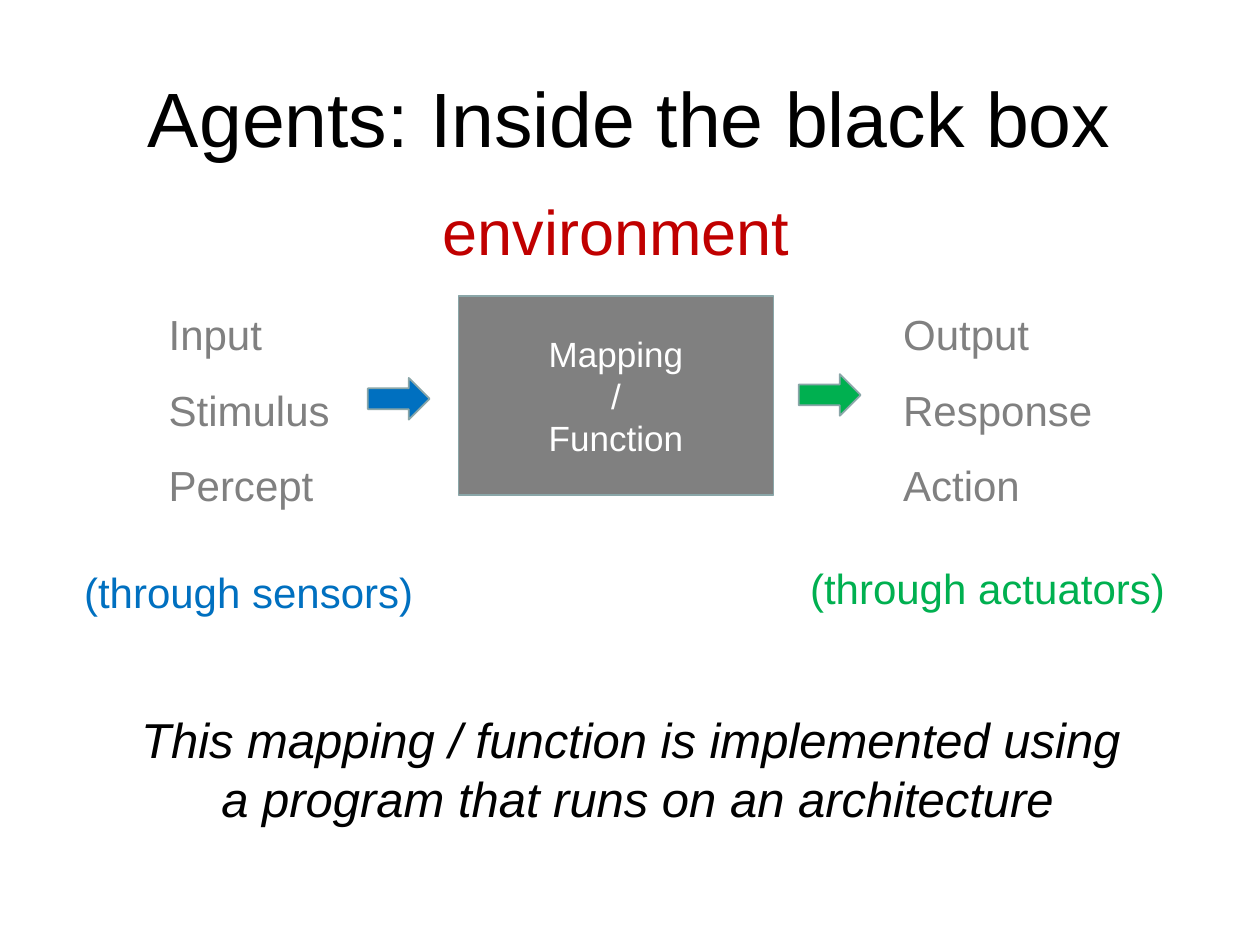
from lxml import etree
from pptx import Presentation
from pptx.dml.color import RGBColor
from pptx.enum.shapes import MSO_SHAPE
from pptx.enum.text import MSO_ANCHOR, MSO_AUTO_SIZE, PP_ALIGN
from pptx.oxml.ns import qn
from pptx.util import Pt

LEFT, CENTER = PP_ALIGN.LEFT, PP_ALIGN.CENTER
MIDDLE = MSO_ANCHOR.MIDDLE
FIT_SHAPE = MSO_AUTO_SIZE.SHAPE_TO_FIT_TEXT
RECTANGLE, RIGHT_ARROW = MSO_SHAPE.RECTANGLE, MSO_SHAPE.RIGHT_ARROW

FONT = "Arial"
BLACK, WHITE, GRAY, RED = "000000", "FFFFFF", "808080", "C00000"
BLUE, GREEN, OUTLINE = "0070C0", "00B050", "8AA6A8"

# Content; boxes are left, top, width, height in points
TITLE = "Agents: Inside the black box"
TITLE_BOX = (36, 21.6, 648, 90)
BLACK_BOX_LINES = ["Mapping", "/", "Function"]
BLACK_BOX = (262, 169.2, 180, 113.8)
ENVIRONMENT = "environment"
ENVIRONMENT_BOX = (244.8, 106.6, 214.6, 51)
CONCLUSION = ["This mapping / function is implemented using ",
              "a program that runs on an architecture"]
CONCLUSION_BOX = (69.8, 401.8, 589, 75)
SIDES = [
    {"terms": ["Input", "Stimulus", "Percept"],
     "terms_box": (89.3, 158.4, 107.3, 138.2),
     "means": "(through sensors)", "means_box": (41, 320.4, 204.5, 36),
     "arrow_box": (210.2, 216, 35.3, 23.8), "color": BLUE},
    {"terms": ["Output", "Response", "Action"],
     "terms_box": (509, 158.4, 123.8, 138.2),
     "means": "(through actuators)", "means_box": (455.8, 318.2, 219.6, 36),
     "arrow_box": (456.5, 213.8, 35.3, 23.8), "color": GREEN},
]


def rgb(color):
    return RGBColor.from_string(color)


def points(box):
    return [Pt(length) for length in box]


def write(frame, lines, size, color, align=LEFT, spacing=None, italic=None):
    frame.text = "\n".join(lines)
    for paragraph in frame.paragraphs:
        paragraph.alignment = align
        paragraph.line_spacing = spacing
        for run in paragraph.runs:
            run.font.name = FONT
            run.font.size = Pt(size)
            run.font.italic = italic
            run.font.color.rgb = rgb(color)


def add_label(slide, box, lines, size, color, **style):
    frame = slide.shapes.add_textbox(*points(box)).text_frame
    frame.word_wrap = False
    frame.auto_size = FIT_SHAPE
    write(frame, lines, size, color, **style)
    return frame


def add_block(slide, preset, box, fill):
    block = slide.shapes.add_shape(preset, *points(box))
    block.shadow.inherit = False
    block.fill.solid()
    block.fill.fore_color.rgb = rgb(fill)
    block.line.color.rgb = rgb(OUTLINE)
    block.line.width = Pt(1)
    return block


def add_text_shadow(run):
    effects = etree.Element(qn("a:effectLst"))
    shadow = etree.SubElement(effects, qn("a:outerShdw"), blurRad="38100",
                              dist="38100", dir="2700000", algn="tl")
    color = etree.SubElement(shadow, qn("a:srgbClr"), val=BLACK)
    etree.SubElement(color, qn("a:alpha"), val="43000")
    run.font.fill._xPr.find(qn("a:solidFill")).addnext(effects)


def main():
    deck = Presentation()
    deck.slide_width, deck.slide_height = Pt(720), Pt(540)
    slide = deck.slides.add_slide(deck.slide_layouts[5])

    # Title
    title = slide.shapes.title
    title.left, title.top, title.width, title.height = points(TITLE_BOX)
    title.text_frame.vertical_anchor = MIDDLE
    write(title.text_frame, [TITLE], 44, BLACK, align=CENTER)

    # Black box in its environment
    black_box = add_block(slide, RECTANGLE, BLACK_BOX, GRAY)
    black_box.text_frame.vertical_anchor = MIDDLE
    write(black_box.text_frame, BLACK_BOX_LINES, 20, WHITE, align=CENTER)
    environment = add_label(slide, ENVIRONMENT_BOX, [ENVIRONMENT], 36, RED,
                            align=CENTER)
    add_text_shadow(environment.paragraphs[0].runs[0])

    # Input and output sides
    for side in SIDES:
        add_label(slide, side["terms_box"], side["terms"], 24, GRAY, spacing=1.5)
        add_label(slide, side["means_box"], [side["means"]], 24, side["color"])
        add_block(slide, RIGHT_ARROW, side["arrow_box"], side["color"])

    # Conclusion
    add_label(slide, CONCLUSION_BOX, CONCLUSION, 28, BLACK, align=CENTER,
              italic=True)

    deck.save("out.pptx")


if __name__ == "__main__":
    main()
